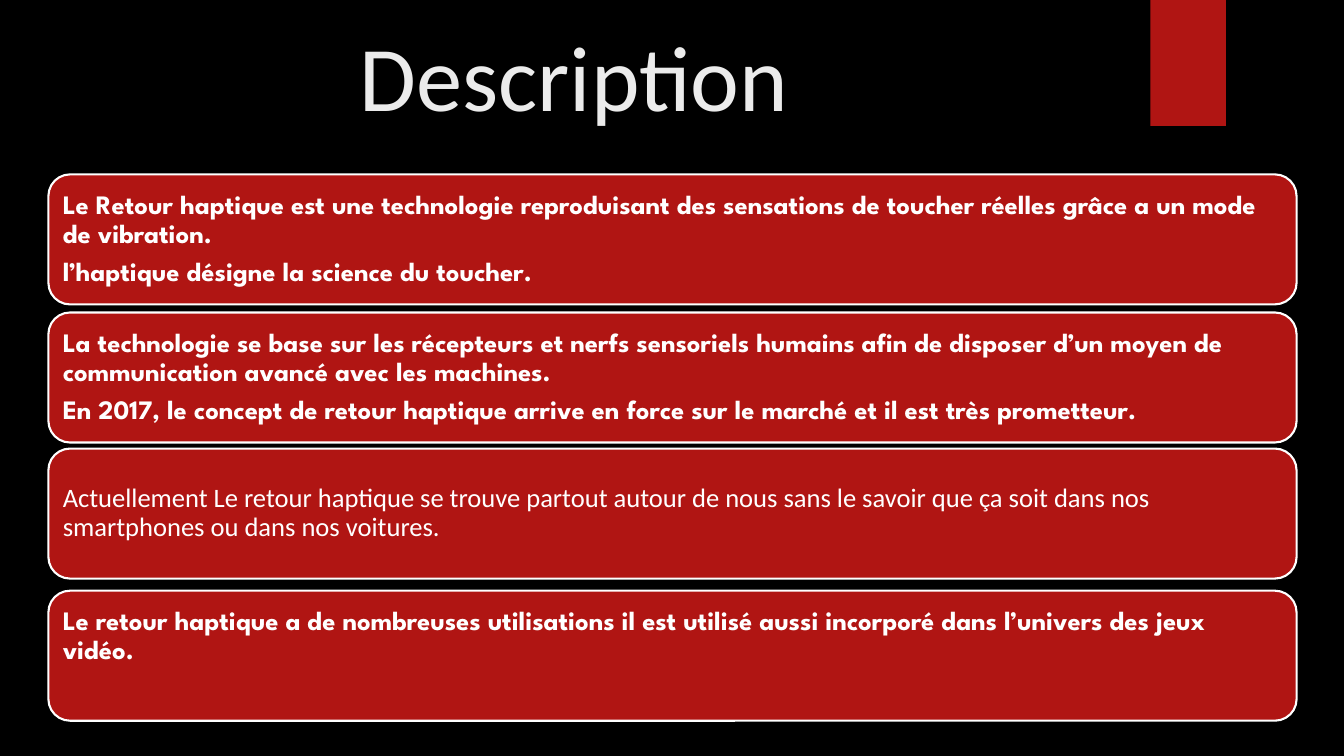
from dataclasses import dataclass

from pptx import Presentation
from pptx.dml.color import RGBColor
from pptx.enum.shapes import MSO_SHAPE
from pptx.enum.text import MSO_ANCHOR, PP_ALIGN
from pptx.util import Inches, Pt


@dataclass(frozen=True)
class Theme:
    """Colours, fonts and sizes of the slide."""
    back: str = "000000"
    red: str = "B01513"
    white: str = "FFFFFF"
    pale: str = "EBEBEB"
    plain: str = "Calibri"
    strong: str = "League Spartan"
    head: int = 66
    body: int = 19


def color(code):
    """Turn a hex code into a colour."""
    return RGBColor.from_string(code)


def write(frame, lines, font, size, ink, bold=False, gap=0, pitch=1.0,
          anchor=MSO_ANCHOR.MIDDLE, inset=(0, 0, 0, 0)):
    """Fill a text frame with left-aligned paragraphs in one format."""
    frame.word_wrap = True
    frame.vertical_anchor = anchor
    (frame.margin_left, frame.margin_top,
     frame.margin_right, frame.margin_bottom) = map(Inches, inset)
    for i, line in enumerate(lines):
        para = frame.add_paragraph() if i else frame.paragraphs[0]
        para.alignment = PP_ALIGN.LEFT
        para.line_spacing = pitch
        para.space_before = Pt(gap if i else 0)
        para.space_after = Pt(0)
        run = para.add_run()
        run.text = line
        run.font.name = font
        run.font.size = Pt(size)
        run.font.bold = bold
        run.font.color.rgb = color(ink)


class Deck:
    """Builds one slide on a fine grid of columns and rows."""
    COLS, ROWS = 1333, 750

    def __init__(self, theme):
        """Start the slide with its background."""
        self.theme = theme
        self.show = Presentation()
        self.show.slide_width = Inches(13.33)
        self.show.slide_height = Inches(7.5)
        self.slide = self.show.slides.add_slide(self.show.slide_layouts[5])
        fill = self.slide.background.fill
        fill.solid()
        fill.fore_color.rgb = color(theme.back)

    def area(self, col, row, wide, high):
        """Convert grid cells to slide lengths."""
        x = self.show.slide_width / self.COLS
        y = self.show.slide_height / self.ROWS
        return int(col * x), int(row * y), int(wide * x), int(high * y)

    def title(self, text, *cells, inset):
        """Place and format the title."""
        t = self.theme
        shape = self.slide.shapes.title
        shape.left, shape.top, shape.width, shape.height = self.area(*cells)
        write(shape.text_frame, [text], t.plain, t.head, t.pale,
              anchor=MSO_ANCHOR.TOP, inset=inset)

    def block(self, kind, *cells, edge=None):
        """Add a red shape, outlined if an edge colour is given."""
        shape = self.slide.shapes.add_shape(kind, *self.area(*cells))
        shape.shadow.inherit = False
        shape.fill.solid()
        shape.fill.fore_color.rgb = color(self.theme.red)
        if edge:
            shape.line.color.rgb = color(edge)
            shape.line.width = Pt(1.5)
        else:
            shape.line.fill.background()
        return shape

    def card(self, row, lines, bold=True, foot=0.08):
        """Add a rounded card of text."""
        t = self.theme
        shape = self.block(MSO_SHAPE.ROUNDED_RECTANGLE, 48, row, 1238, 129,
                           edge=t.white)
        write(shape.text_frame, lines, t.strong if bold else t.plain, t.body,
              t.white, bold=bold, gap=6.65, pitch=0.9,
              inset=(0.08, 0.08, 0.08, foot))


def main():
    """Build and save the slide."""
    deck = Deck(Theme())
    deck.block(MSO_SHAPE.RECTANGLE, 1141, 0, 75, 125)
    deck.title("Description", 116, 9, 1029, 153, inset=(2.41, 0.1, 0, 0))
    deck.card(173, [
        "Le Retour haptique est une technologie reproduisant des sensations "
        "de toucher réelles grâce a un mode de vibration.",
        "l’haptique désigne la science du toucher."])
    deck.card(310, [
        "La technologie se base sur les récepteurs et nerfs sensoriels "
        "humains afin de disposer d’un moyen de communication avancé avec "
        "les machines.",
        "En 2017, le concept de retour haptique arrive en force sur le "
        "marché et il est très prometteur."])
    deck.card(445, [
        "Actuellement Le retour haptique se trouve partout autour de nous "
        "sans le savoir que ça soit dans nos smartphones ou dans nos "
        "voitures."], bold=False)
    deck.card(586, [
        "Le retour haptique a de nombreuses utilisations il est utilisé "
        "aussi incorporé dans l’univers des jeux vidéo."], foot=0.46)
    deck.show.save("out.pptx")


if __name__ == "__main__":
    main()
